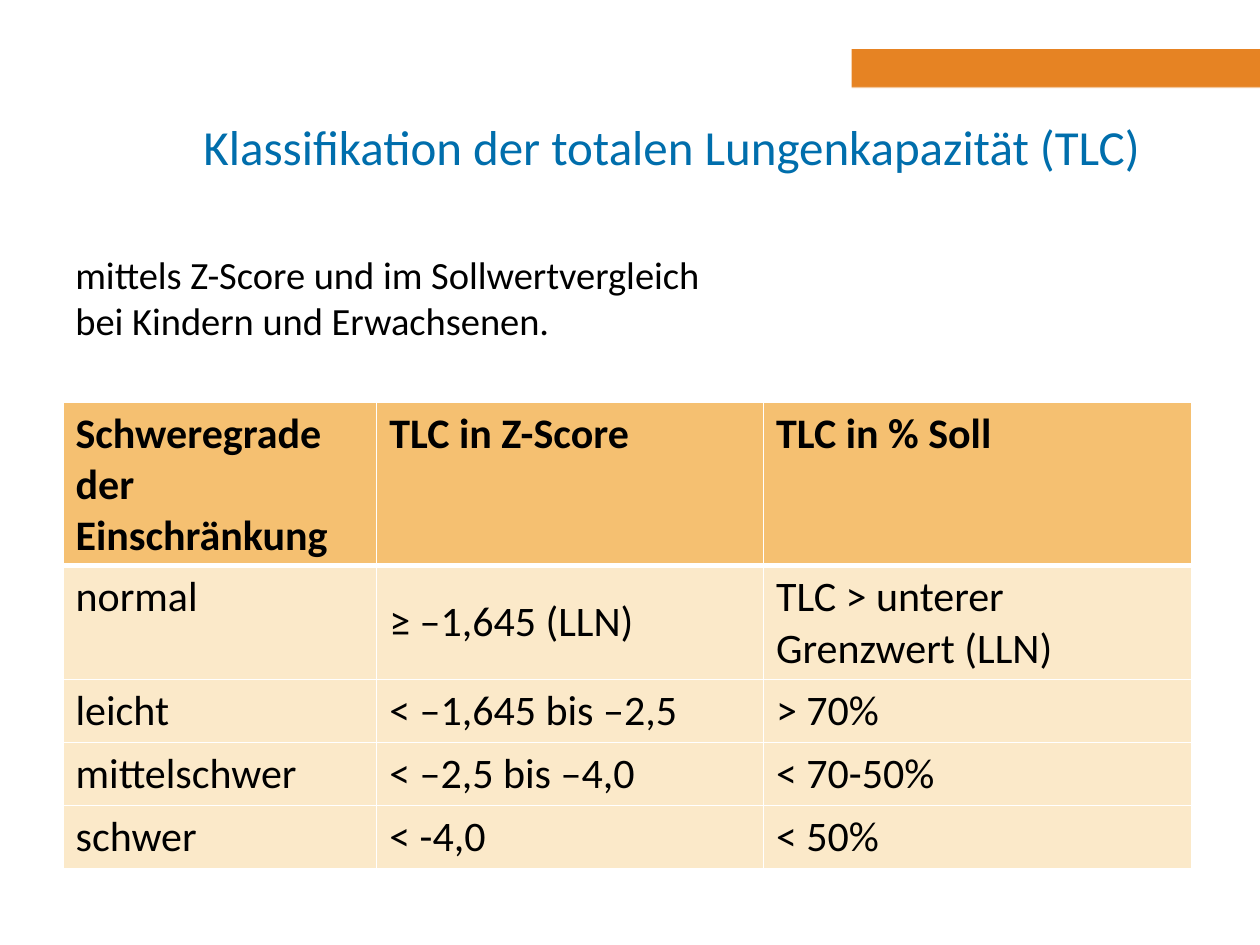
from lxml.etree import SubElement
from pptx import Presentation
from pptx.dml.color import RGBColor
from pptx.enum.shapes import MSO_SHAPE
from pptx.enum.text import MSO_ANCHOR, PP_ALIGN
from pptx.oxml.ns import qn
from pptx.util import Inches, Pt

FONT = "Calibri"
WHITE, BLACK, BLUE, ORANGE = "FFFFFF", "000000", "006EAC", "E68323"
HEADER_FILL, BODY_FILL = "F5C071", "FBE9C9"

COLUMN_WIDTHS = [2.49, 3.07, 3.4]
ROW_HEIGHTS = [1.3, 0.9, 0.5, 0.5, 0.5]
SEVERITY_ROWS = [
    ["Schweregrade der Einschränkung", "TLC in Z-Score", "TLC in % Soll"],
    ["normal", "≥ –1,645 (LLN)", "TLC > unterer Grenzwert (LLN)"],
    ["leicht", "< –1,645 bis –2,5", "> 70%"],
    ["mittelschwer", "< –2,5 bis –4,0", "< 70-50%"],
    ["schwer", "< -4,0", "< 50%"],
]
MIDDLE_CELLS = {(1, 1), (1, 2)}


def rgb(value):
    return RGBColor.from_string(value)


def style_paragraph(paragraph, size, color, bold=False):
    font = paragraph.font
    font.name, font.size, font.bold = FONT, Pt(size), bold
    font.color.rgb = rgb(color)


def add_bar(page, left, top, width, height, color, opacity=100):
    bar = page.shapes.add_shape(MSO_SHAPE.RECTANGLE, Inches(left), Inches(top),
                                Inches(width), Inches(height))
    bar.shadow.inherit = False
    bar.fill.solid()
    bar.fill.fore_color.rgb = rgb(color)
    bar.line.fill.background()
    if opacity < 100:
        shade = bar._element.spPr.find(qn("a:solidFill"))[0]
        SubElement(shade, qn("a:alpha"), val=str(opacity * 1000))


def set_title(page, text):
    title = page.shapes.title
    page.shapes._spTree.append(title._element)  # in front of the bars
    title.left, title.top = Inches(1.48), Inches(0.69)
    title.width, title.height = Inches(7.7), Inches(0.93)
    frame = title.text_frame
    frame.text = text
    frame.vertical_anchor = MSO_ANCHOR.MIDDLE
    frame.paragraphs[0].alignment = PP_ALIGN.CENTER
    style_paragraph(frame.paragraphs[0], 28, BLUE)


def add_text(page, left, top, width, height, text):
    box = page.shapes.add_textbox(Inches(left), Inches(top),
                                  Inches(width), Inches(height))
    frame = box.text_frame
    frame.word_wrap = True
    frame.text = text
    style_paragraph(frame.paragraphs[0], 22, BLACK)


def set_borders(cell, **widths):
    """Draw white cell borders; widths are points by side tag."""
    properties = cell._tc.get_or_add_tcPr()
    for position, (side, width) in enumerate(widths.items()):
        line = SubElement(properties, qn(f"a:{side}"), w=str(Pt(width)))
        properties.insert(position, line)
        fill = SubElement(line, qn("a:solidFill"))
        SubElement(fill, qn("a:srgbClr"), val=WHITE)


def add_severity_table(page, left, top):
    frame = page.shapes.add_table(
        len(SEVERITY_ROWS), len(COLUMN_WIDTHS), Inches(left), Inches(top),
        Inches(sum(COLUMN_WIDTHS)), Inches(sum(ROW_HEIGHTS)))
    table = frame.table
    for column, width in zip(table.columns, COLUMN_WIDTHS):
        column.width = Inches(width)
    for row, height in zip(table.rows, ROW_HEIGHTS):
        row.height = Inches(height)
    for row, texts in enumerate(SEVERITY_ROWS):
        header = row == 0
        for column, text in enumerate(texts):
            cell = table.cell(row, column)
            cell.text = text
            style_paragraph(cell.text_frame.paragraphs[0], 24, BLACK, header)
            cell.fill.solid()
            cell.fill.fore_color.rgb = rgb(HEADER_FILL if header else BODY_FILL)
            if (row, column) in MIDDLE_CELLS:
                cell.vertical_anchor = MSO_ANCHOR.MIDDLE
            set_borders(cell, lnL=1, lnR=1, lnT=3 if row == 1 else 1,
                        lnB=3 if header else 1)


def main():
    deck = Presentation()
    deck.slide_width, deck.slide_height = Inches(10), Inches(7.5)
    page = deck.slides.add_slide(deck.slide_layouts[5])
    add_bar(page, 6.76, 0.39, 3.24, 0.31, ORANGE)
    add_bar(page, 0, 0.69, 10, 0.93, WHITE, opacity=55)
    set_title(page, "Klassifikation der totalen Lungenkapazität (TLC)")
    add_text(page, 0.5, 1.94, 9, 1.26,
             "mittels Z-Score und im Sollwertvergleich\v"
             "bei Kindern und Erwachsenen.")
    add_severity_table(page, 0.5, 3.19)
    deck.save("out.pptx")


if __name__ == "__main__":
    main()
